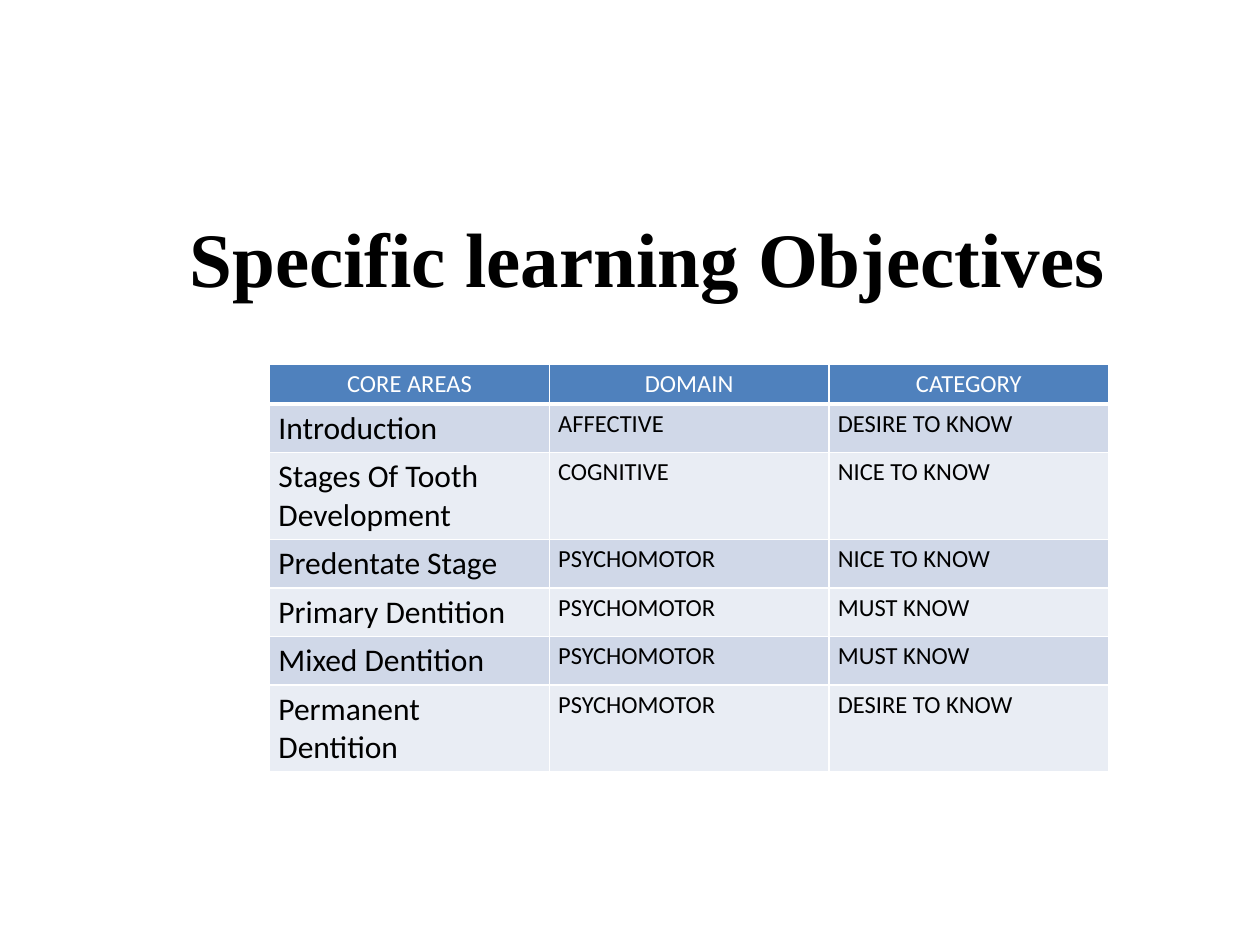
import pptx
import pptx.dml.color
import pptx.enum.text
import pptx.oxml
import pptx.oxml.ns
import pptx.util

Inches, Pt = pptx.util.Inches, pptx.util.Pt
ALIGN = pptx.enum.text.PP_ALIGN
ANCHOR = pptx.enum.text.MSO_ANCHOR

TITLE = "Specific learning Objectives"
HEADER = ("CORE AREAS", "DOMAIN", "CATEGORY")
OBJECTIVES = [
    ("Introduction", "AFFECTIVE", "DESIRE TO KNOW"),
    ("Stages Of Tooth Development", "COGNITIVE", "NICE TO KNOW"),
    ("Predentate Stage", "PSYCHOMOTOR", "NICE TO KNOW"),
    ("Primary Dentition", "PSYCHOMOTOR", "MUST KNOW"),
    ("Mixed Dentition", "PSYCHOMOTOR", "MUST KNOW"),
    ("Permanent Dentition", "PSYCHOMOTOR", "DESIRE TO KNOW"),
]
COLOURS = {"text": "000000", "header": "4F81BD", "header text": "FFFFFF",
           "odd": "D0D8E8", "even": "E9EDF4", "border": "FFFFFF"}
COLUMN_WIDTH, ROW_HEIGHT = 2.22, 0.3


def colour(name):
    return pptx.dml.color.RGBColor.from_string(COLOURS[name])


def format_text(frame, font, size, colour_name, align, bold=False):
    para = frame.paragraphs[0]
    para.alignment = align
    for span in para.runs:
        span.font.name = font
        span.font.size = Pt(size)
        span.font.bold = bold
        span.font.color.rgb = colour(colour_name)


def add_borders(cell, bottom_width):
    properties = cell._tc.get_or_add_tcPr()
    for side, width in (("L", 1), ("R", 1), ("T", 1), ("B", bottom_width)):
        properties.append(pptx.oxml.parse_xml(
            f'<a:ln{side} {pptx.oxml.ns.nsdecls("a")} w="{Pt(width)}"><a:solidFill>'
            f'<a:srgbClr val="{COLOURS["border"]}"/></a:solidFill></a:ln{side}>'))


def add_title(page):
    title = page.shapes.title
    title.left, title.top = Inches(1.34), Inches(1.59)
    title.width, title.height = Inches(7.6), Inches(0.9)
    title.text_frame.text = TITLE
    title.text_frame.vertical_anchor = ANCHOR.MIDDLE
    format_text(title.text_frame, "Times New Roman", 44, "text", ALIGN.CENTER, True)


def add_objectives(page):
    rows = [HEADER] + OBJECTIVES
    table = page.shapes.add_table(
        len(rows), len(HEADER), Inches(2.14), Inches(2.89),
        Inches(COLUMN_WIDTH * len(HEADER)), Inches(ROW_HEIGHT * len(rows))).table
    for r, row in enumerate(rows):
        is_header = r == 0
        fill = "header" if is_header else "odd" if r % 2 else "even"
        for c, wording in enumerate(row):
            cell = table.cell(r, c)
            cell.margin_left = cell.margin_right = Inches(0.07)
            cell.margin_top = cell.margin_bottom = Inches(0.04)
            add_borders(cell, 3 if is_header else 1)
            cell.fill.solid()
            cell.fill.fore_color.rgb = colour(fill)
            cell.text_frame.text = wording
            format_text(cell.text_frame, "Calibri",
                        18 if c == 0 and not is_header else 14,
                        "header text" if is_header else "text",
                        ALIGN.CENTER if is_header else ALIGN.LEFT)


def main():
    deck = pptx.Presentation()
    deck.slide_width, deck.slide_height = Inches(10), Inches(7.5)
    page = deck.slides.add_slide(deck.slide_layouts.get_by_name("Title Only"))
    add_title(page)
    add_objectives(page)
    deck.save("out.pptx")


if __name__ == "__main__":
    main()
